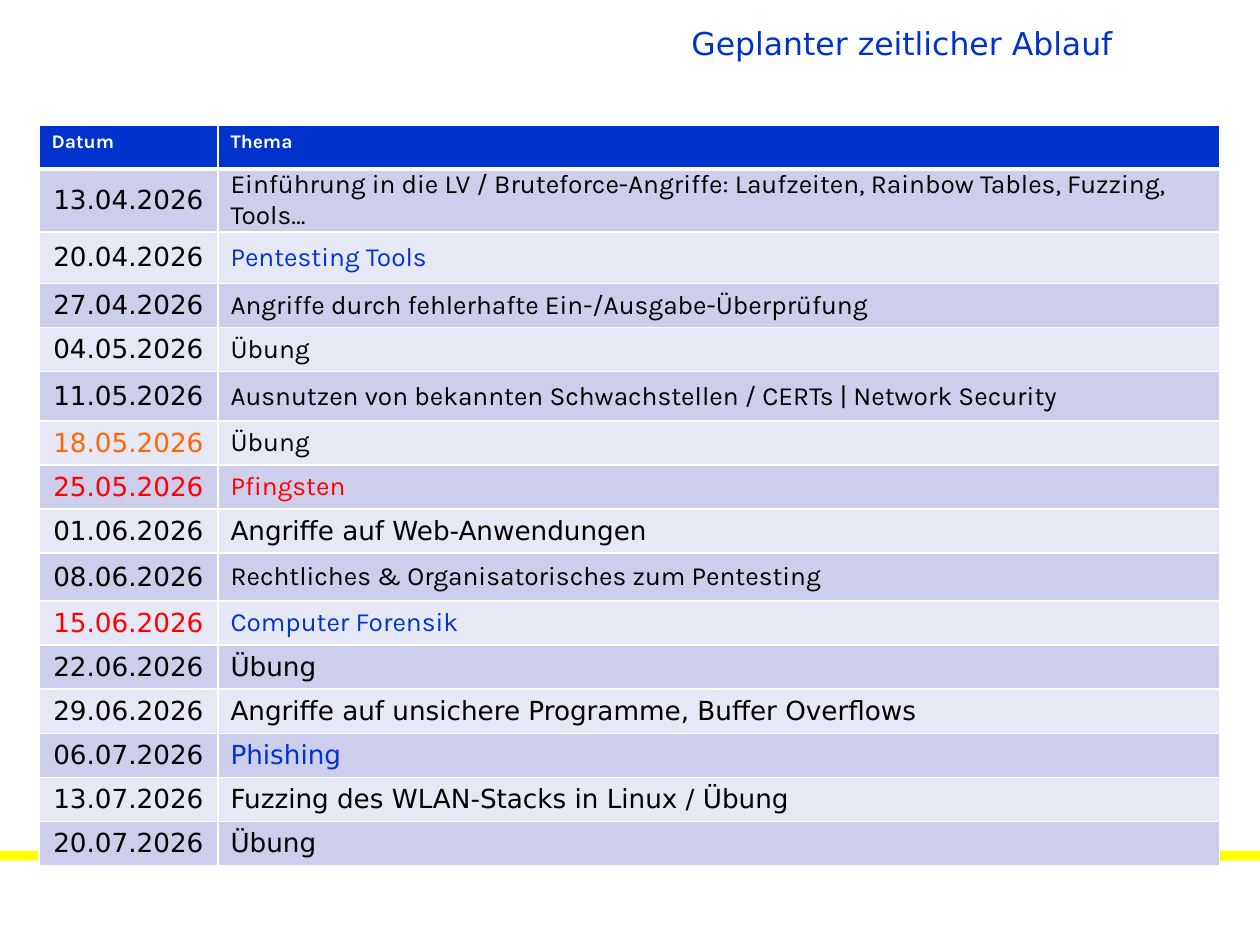
import pptx
import pptx.dml.color
import pptx.enum.shapes
import pptx.enum.text
import pptx.oxml
import pptx.oxml.ns
import pptx.util
from dataclasses import dataclass

Inches = pptx.util.Inches
ALIGN = pptx.enum.text.PP_ALIGN
ANCHOR = pptx.enum.text.MSO_ANCHOR


@dataclass(frozen=True)
class Theme:
    blue: str = "0033CC"
    red: str = "FF0000"
    orange: str = "FF6600"
    black: str = "000000"
    white: str = "FFFFFF"
    yellow: str = "FFFF00"
    bands: tuple = ("CCCEEC", "E7E8F6")
    sans: str = "DejaVu Sans"
    karla: str = "Karla"
    title: int = 18
    head: int = 11
    body: int = 15


THEME = Theme()

# Date, topic, topic font, topic colour, date colour
PLAN = [
    ("13.04.2026", "Einführung in die LV / Bruteforce-Angriffe: Laufzeiten, "
     "Rainbow Tables, Fuzzing, Tools…", THEME.karla, THEME.black, THEME.black),
    ("20.04.2026", "Pentesting Tools", THEME.karla, THEME.blue, THEME.black),
    ("27.04.2026", "Angriffe durch fehlerhafte Ein-/Ausgabe-Überprüfung",
     THEME.karla, THEME.black, THEME.black),
    ("04.05.2026", "Übung", THEME.karla, THEME.black, THEME.black),
    ("11.05.2026", "Ausnutzen von bekannten Schwachstellen / CERTs | Network Security",
     THEME.karla, THEME.black, THEME.black),
    ("18.05.2026", "Übung", THEME.karla, THEME.black, THEME.orange),
    ("25.05.2026", "Pfingsten", THEME.karla, THEME.red, THEME.red),
    ("01.06.2026", "Angriffe auf Web-Anwendungen", THEME.sans, THEME.black, THEME.black),
    ("08.06.2026", "Rechtliches & Organisatorisches zum Pentesting",
     THEME.karla, THEME.black, THEME.black),
    ("15.06.2026", "Computer Forensik", THEME.karla, THEME.blue, THEME.red),
    ("22.06.2026", "Übung", THEME.sans, THEME.black, THEME.black),
    ("29.06.2026", "Angriffe auf unsichere Programme, Buffer Overflows",
     THEME.sans, THEME.black, THEME.black),
    ("06.07.2026", "Phishing", THEME.sans, THEME.blue, THEME.black),
    ("13.07.2026", "Fuzzing des WLAN-Stacks in Linux / Übung",
     THEME.sans, THEME.black, THEME.black),
    ("20.07.2026", "Übung", THEME.sans, THEME.black, THEME.black),
]
WIDTHS = (1.42, 7.95)
HEIGHT = 0.35
TALL = {1: 0.48, 2: 0.41, 5: 0.39, 9: 0.38}


def rgb(color):
    return pptx.dml.color.RGBColor.from_string(color)


def write(frame, text, size=THEME.body, font=THEME.sans, color=THEME.black,
          bold=False, align=ALIGN.LEFT):
    para = frame.paragraphs[0]
    para.alignment = align
    run = para.add_run()
    run.text = text
    run.font.size = pptx.util.Pt(size)
    run.font.name = font
    run.font.bold = bold
    run.font.color.rgb = rgb(color)


def add_bar(slide):
    bar = slide.shapes.add_shape(pptx.enum.shapes.MSO_SHAPE.RECTANGLE,
                                 0, Inches(6.75), Inches(10), Inches(0.08))
    bar.shadow.inherit = False
    bar.fill.solid()
    bar.fill.fore_color.rgb = rgb(THEME.yellow)
    bar.line.fill.background()


def add_title(slide, text):
    box = slide.shapes.add_textbox(Inches(0.33), 0, Inches(8.6), Inches(0.68))
    frame = box.text_frame
    frame.word_wrap = True
    frame.vertical_anchor = ANCHOR.MIDDLE
    write(frame, text, size=THEME.title, color=THEME.blue, align=ALIGN.RIGHT)


def style(cell, fill, **edges):
    """Fill a cell and rule its edges; edges gives widths other than 1 pt."""
    props = cell._tc.get_or_add_tcPr()
    for side in "LRTB":
        width = pptx.util.Pt(edges.get(side, 1))
        props.append(pptx.oxml.parse_xml(
            f'<a:ln{side} {pptx.oxml.ns.nsdecls("a")} w="{width}"><a:solidFill>'
            f'<a:srgbClr val="{THEME.white}"/></a:solidFill></a:ln{side}>'))
    cell.fill.solid()
    cell.fill.fore_color.rgb = rgb(fill)


def pad(cell, side):
    """Centre a body cell vertically, with padding at the sides only."""
    cell.vertical_anchor = ANCHOR.MIDDLE
    cell.margin_left = cell.margin_right = Inches(side)
    cell.margin_top = cell.margin_bottom = 0


def add_plan(slide):
    count = len(PLAN) + 1
    heights = [TALL.get(row, HEIGHT) for row in range(count)]
    table = slide.shapes.add_table(
        count, len(WIDTHS), Inches(0.31), Inches(0.99),
        Inches(sum(WIDTHS)), Inches(sum(heights))).table
    for col, width in zip(table.columns, WIDTHS):
        col.width = Inches(width)
    for row, height in zip(table.rows, heights):
        row.height = Inches(height)

    for col, text in enumerate(("Datum", "Thema")):
        cell = table.cell(0, col)
        style(cell, THEME.blue, B=3)
        write(cell.text_frame, text, size=THEME.head, font=THEME.karla,
              color=THEME.white, bold=True)

    for row, (date, topic, font, color, mark) in enumerate(PLAN, 1):
        day, theme = table.cell(row, 0), table.cell(row, 1)
        for cell, side in ((day, 0), (theme, 0.1)):
            pad(cell, side)
            style(cell, THEME.bands[(row - 1) % 2], T=3 if row == 1 else 1)
        write(day.text_frame, date, color=mark, align=ALIGN.CENTER)
        write(theme.text_frame, topic, font=font, color=color)


def main():
    deck = pptx.Presentation()
    deck.slide_width, deck.slide_height = Inches(10), Inches(7.5)
    slide = deck.slides.add_slide(deck.slide_layouts[6])
    add_bar(slide)
    add_title(slide, "Geplanter zeitlicher Ablauf")
    add_plan(slide)
    deck.save("out.pptx")


if __name__ == "__main__":
    main()
